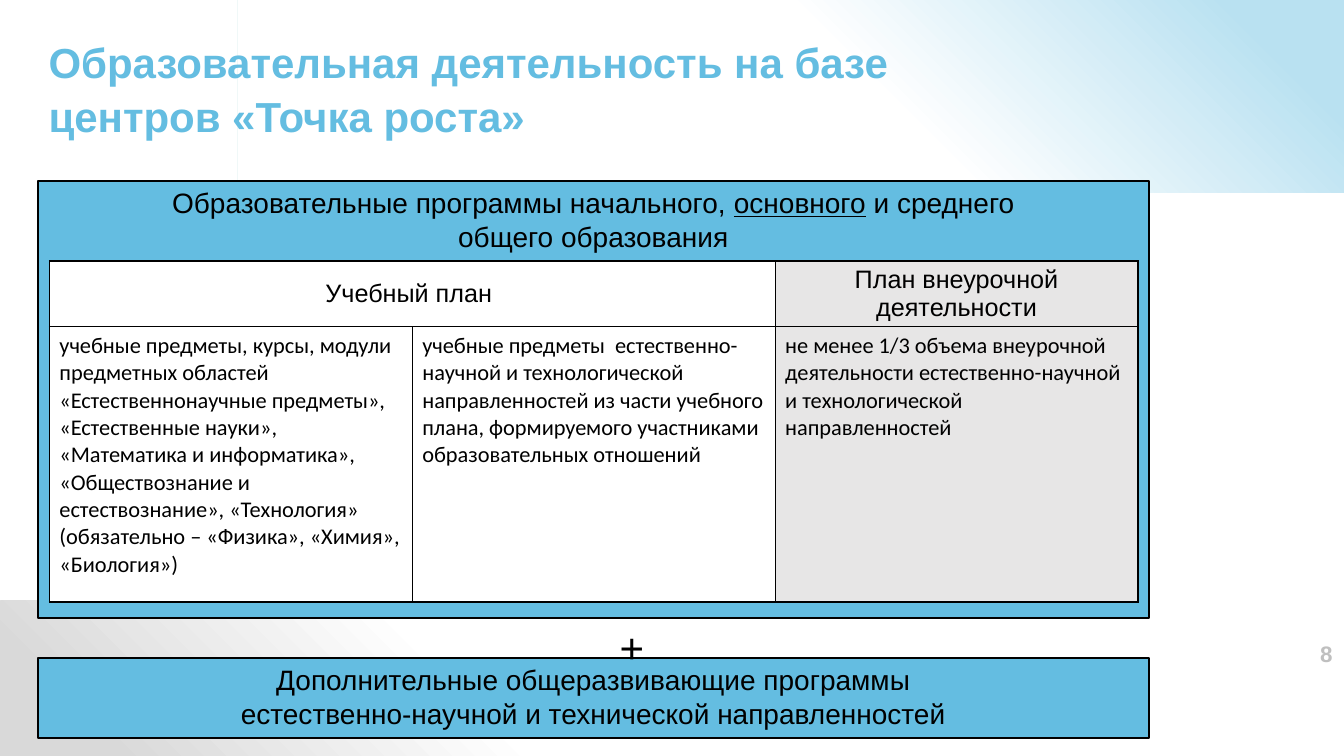
from dataclasses import dataclass

from lxml.etree import SubElement
from pptx import Presentation
from pptx.dml.color import RGBColor
from pptx.enum.shapes import MSO_SHAPE as Preset
from pptx.enum.text import MSO_ANCHOR as Anchor, MSO_AUTO_SIZE as AutoSize, PP_ALIGN as Align
from pptx.oxml.ns import qn
from pptx.shapes.autoshape import Shape
from pptx.slide import Slide
from pptx.table import _Cell as Cell
from pptx.text.text import TextFrame
from pptx.util import Pt

BLACK = RGBColor(0x00, 0x00, 0x00)
WHITE = RGBColor(0xFF, 0xFF, 0xFF)
SKY = RGBColor(0x64, 0xBD, 0xE1)
PALE_SKY = RGBColor(0xB9, 0xE1, 0xF1)
SILVER = RGBColor(0xD9, 0xD9, 0xD9)
PAGE_GRAY = RGBColor(0xBF, 0xBF, 0xBF)
WARM_GRAY = RGBColor(0xE7, 0xE6, 0xE6)


@dataclass(frozen=True)
class Box:
    left: float
    top: float
    width: float
    height: float

    def lengths(self) -> tuple[Pt, Pt, Pt, Pt]:
        return Pt(self.left), Pt(self.top), Pt(self.width), Pt(self.height)


@dataclass(frozen=True)
class Style:
    size: float
    color: RGBColor = BLACK
    align: Align = Align.CENTER
    bold: bool = False
    font: str = "Arial"
    spacing: float = 1.0


@dataclass(frozen=True)
class Band:
    box: Box
    color: RGBColor
    rotation: int


@dataclass(frozen=True)
class Panel:
    box: Box
    text: str
    underlined: str = ""


@dataclass(frozen=True)
class PlanColumn:
    heading: str
    content: str
    fill: RGBColor


HEADING = Style(18)
CONTENT = Style(16, align=Align.LEFT, font="Calibri")
PANEL = Style(20)

BANDS = [
    Band(Box(170, 0, 790, 137.5), PALE_SKY, 0),
    Band(Box(0, 429, 790, 111), SILVER, 180),
]
PANELS = [
    Panel(
        Box(27, 470, 793.5, 57),
        "Дополнительные общеразвивающие программы\n"
        "естественно-научной и технической направленностей",
    ),
    Panel(
        Box(27, 129, 793.5, 312.5),
        "Образовательные программы начального, основного и среднего\n"
        "общего образования",
        "основного",
    ),
]
PLAN_COLUMNS = [
    PlanColumn(
        "Учебный план ",
        "учебные предметы, курсы, модули предметных областей «Естественнонаучные предметы», "
        "«Естественные науки», «Математика и информатика», «Обществознание и естествознание», "
        "«Технология» (обязательно – «Физика», «Химия», «Биология»)",
        WHITE,
    ),
    PlanColumn(
        "",
        "учебные предметы  естественно-научной и технологической направленностей из части "
        "учебного плана, формируемого участниками образовательных отношений",
        WHITE,
    ),
    PlanColumn(
        "План внеурочной деятельности",
        "не менее 1/3 объема внеурочной деятельности естественно-научной "
        "и технологической направленностей",
        WARM_GRAY,
    ),
]
ROW_HEIGHTS = [47, 196.5]


def format_text(frame: TextFrame, style: Style) -> None:
    for paragraph in frame.paragraphs:
        paragraph.alignment = style.align
        paragraph.line_spacing = style.spacing
        for run in paragraph.runs:
            run.font.name = style.font
            run.font.size = Pt(style.size)
            run.font.bold = style.bold
            run.font.color.rgb = style.color


def add_rectangle(slide: Slide, box: Box) -> Shape:
    rectangle = slide.shapes.add_shape(Preset.RECTANGLE, *box.lengths())
    rectangle.shadow.inherit = False
    return rectangle


def add_band(slide: Slide, band: Band) -> None:
    rectangle = add_rectangle(slide, band.box)
    rectangle.rotation = band.rotation
    rectangle.line.fill.background()
    rectangle.fill.gradient()
    rectangle.fill.gradient_angle = 225
    stops = zip(rectangle.fill.gradient_stops, (0.09, 0.43), (band.color, WHITE))
    for stop, position, color in stops:
        stop.position = position
        stop.color.rgb = color
    slide.shapes.title.element.addprevious(rectangle.element)


def add_panel(slide: Slide, panel: Panel) -> None:
    rectangle = add_rectangle(slide, panel.box)
    rectangle.fill.solid()
    rectangle.fill.fore_color.rgb = SKY
    rectangle.line.color.rgb = BLACK
    rectangle.line.width = Pt(1.5)
    frame = rectangle.text_frame
    frame.word_wrap = True
    frame.vertical_anchor = Anchor.TOP
    frame.text = panel.text
    if panel.underlined:
        opening = frame.paragraphs[0]
        before, after = opening.text.split(panel.underlined)
        opening.text = before
        for part in (panel.underlined, after):
            run = opening.add_run()
            run.text = part
            run.font.underline = part == panel.underlined
    format_text(frame, PANEL)


def add_label(slide: Slide, box: Box, text: str, style: Style, anchor: Anchor) -> None:
    frame = slide.shapes.add_textbox(*box.lengths()).text_frame
    frame.word_wrap = True
    frame.vertical_anchor = anchor
    frame.text = text
    format_text(frame, style)


def fill_cell(cell: Cell, text: str, style: Style, fill: RGBColor) -> None:
    cell.text_frame.text = text
    format_text(cell.text_frame, style)
    properties = cell._tc.get_or_add_tcPr()
    for side in ("a:lnL", "a:lnR", "a:lnT", "a:lnB"):
        border = SubElement(properties, qn(side), w=str(Pt(1)))
        SubElement(SubElement(border, qn("a:solidFill")), qn("a:srgbClr"), val=str(BLACK))
    cell.fill.solid()
    cell.fill.fore_color.rgb = fill


def add_plan(slide: Slide, box: Box) -> None:
    plan = slide.shapes.add_table(len(ROW_HEIGHTS), len(PLAN_COLUMNS), *box.lengths()).table
    plan.first_row = plan.horz_banding = False
    for row, height in zip(plan.rows, ROW_HEIGHTS):
        row.height = Pt(height)
    for index, column in enumerate(PLAN_COLUMNS):
        plan.columns[index].width = Pt(box.width / len(PLAN_COLUMNS))
        heading = plan.cell(0, index)
        heading.vertical_anchor = Anchor.MIDDLE
        heading.margin_top = heading.margin_bottom = Pt(0)
        fill_cell(heading, column.heading, HEADING, column.fill)
        fill_cell(plan.cell(1, index), column.content, CONTENT, column.fill)
    plan.cell(0, 0).merge(plan.cell(0, 1))


def set_title(slide: Slide, box: Box, text: str) -> None:
    title = slide.shapes.title
    title.left, title.top, title.width, title.height = box.lengths()
    frame = title.text_frame
    frame.text = text
    frame.word_wrap = True
    frame.auto_size = AutoSize.NONE
    frame.vertical_anchor = Anchor.MIDDLE
    format_text(frame, Style(30, SKY, Align.LEFT, bold=True, spacing=1.07))


def main() -> None:
    deck = Presentation()
    deck.slide_width, deck.slide_height = Pt(960), Pt(540)
    slide = deck.slides.add_slide(deck.slide_layouts.get_by_name("Title Only"))
    set_title(slide, Box(27.5, 24.5, 744, 75.5),
              "Образовательная деятельность на базе\nцентров «Точка роста»")
    for band in BANDS:
        add_band(slide, band)
    add_label(slide, Box(901.5, 452, 57.5, 29.5), "8",
              Style(16, PAGE_GRAY, Align.RIGHT, bold=True), Anchor.MIDDLE)
    for panel in PANELS:
        add_panel(slide, panel)
    add_plan(slide, Box(35.25, 186.5, 777.6, sum(ROW_HEIGHTS)))
    add_label(slide, Box(424, 440.5, 54.5, 44), "+", Style(30), Anchor.TOP)
    deck.save("out.pptx")


if __name__ == "__main__":
    main()
